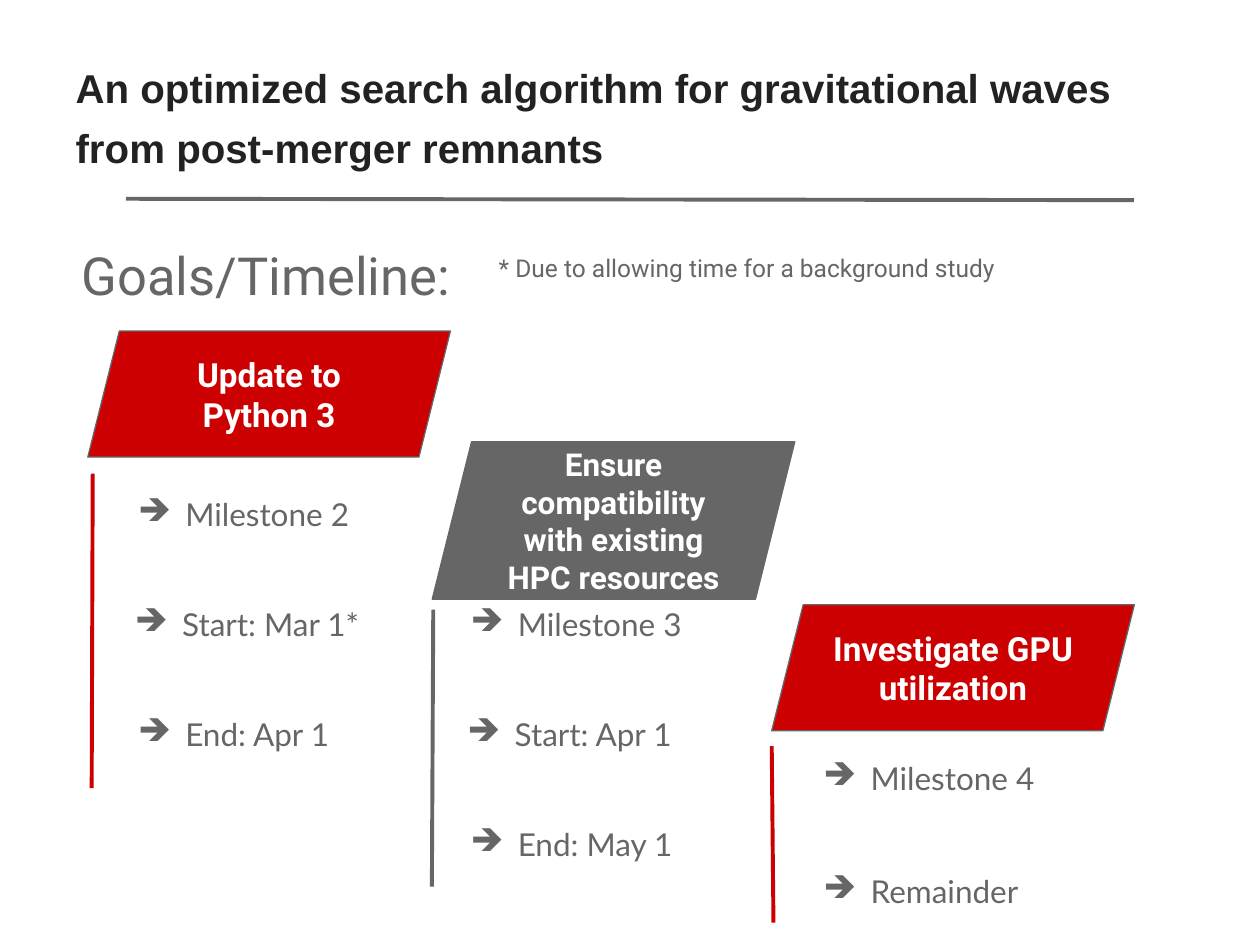
from lxml.etree import SubElement
from pptx import Presentation
from pptx.dml.color import RGBColor
from pptx.enum.shapes import MSO_CONNECTOR, MSO_SHAPE
from pptx.enum.text import MSO_ANCHOR, PP_ALIGN
from pptx.oxml.ns import qn
from pptx.util import Pt

RED = RGBColor(0xCC, 0x00, 0x00)
GRAY = RGBColor(0x66, 0x66, 0x66)
INK = RGBColor(0x22, 0x22, 0x22)
WHITE = RGBColor(0xFF, 0xFF, 0xFF)
INSET = 7.2


def write(shape, lines, size, face, color, bold=False, align=PP_ALIGN.LEFT, bullet=None, gap=0):
    frame = shape.text_frame
    frame.word_wrap = True
    for side in ("left", "top", "right", "bottom"):
        setattr(frame, f"margin_{side}", Pt(INSET))
    for index, line in enumerate(lines):
        paragraph = frame.paragraphs[0] if index == 0 else frame.add_paragraph()
        paragraph.alignment = align
        if index:
            paragraph.space_before = Pt(gap)
        if bullet:
            properties = paragraph._p.get_or_add_pPr()
            properties.set("marL", str(Pt(36)))
            properties.set("indent", str(Pt(-27)))
            bullet_color = SubElement(properties, qn("a:buClr"))
            SubElement(bullet_color, qn("a:srgbClr")).set("val", str(color))
            SubElement(properties, qn("a:buChar")).set("char", bullet)
        run = paragraph.add_run()
        run.text = line
        for name, value in {"size": Pt(size), "name": face, "bold": bold}.items():
            setattr(run.font, name, value)
        run.font.color.rgb = color
    return frame


def rule(x1, y1, x2, y2, color):
    line = slide.shapes.add_connector(MSO_CONNECTOR.STRAIGHT, Pt(x1), Pt(y1), Pt(x2), Pt(y2))
    line.line.color.rgb = color
    line.line.width = Pt(2.25)
    SubElement(line._element.spPr, qn("a:effectLst"))


deck = Presentation()
deck.slide_width, deck.slide_height = Pt(720), Pt(540)
slide = deck.slides.add_slide(deck.slide_layouts[5])

title = slide.shapes.title
placement = {"left": 36, "top": 36.7, "width": 648, "height": 90}
for side, value in placement.items():
    setattr(title, side, Pt(value))
heading = write(
    title,
    ["An optimized search algorithm for gravitational waves from post-merger remnants"],
    23, "Arial", INK, bold=True,
)
heading.vertical_anchor = MSO_ANCHOR.BOTTOM
heading.margin_bottom = Pt(28.7)
heading.paragraphs[0].line_spacing = 1.25
rule(648, 114.4, 72, 113.6, GRAY)

for text, left, top, width, height, size in [
    ("Goals/Timeline:", 39.6, 131.8, 229.7, 52.6, 30),
    ("* Due to allowing time for a background study", 277.9, 137.5, 406, 44.6, 14),
]:
    caption = slide.shapes.add_textbox(Pt(left), Pt(top), Pt(width), Pt(height))
    write(caption, [text], size, "Roboto", GRAY)

ROW_PITCH = 62.8
goals = [
    ("Update to Python 3", RED, 50.2, 189.2, 72, 19, (53, 270.6, 52.4, 450.4),
     [(62.8, 275.8, ["Milestone 2"]), (61, 275.8 + ROW_PITCH, ["Start: Mar 1*"]),
      (62.8, 275.8 + 2 * ROW_PITCH, ["End: Apr 1"])]),
    ("Ensure compatibility with existing HPC resources", GRAY, 247, 252.4, 90, 18,
     (247.6, 348.4, 246.8, 506.6),
     [(252.8, 338.6, ["Milestone 3"]), (251, 338.6 + ROW_PITCH, ["Start: Apr 1"]),
      (252.8, 338.6 + 2 * ROW_PITCH, ["End: May 1"])]),
    ("Investigate GPU utilization", RED, 441, 345.6, 72, 19, (441, 426.4, 442, 527.2),
     [(454.4, 426.4, ["Milestone 4", "Remainder"])]),
]
for goal, color, left, top, height, size, bar, steps in goals:
    banner = slide.shapes.add_shape(
        MSO_SHAPE.PARALLELOGRAM, Pt(left), Pt(top), Pt(207.2), Pt(height))
    banner.adjustments[0] = 0.25
    banner.shadow.inherit = False
    banner.fill.solid()
    banner.fill.fore_color.rgb = color
    banner.line.color.rgb = GRAY
    banner.line.width = Pt(0.75)
    label = write(banner, [goal], size, "Roboto", WHITE, bold=True, align=PP_ALIGN.CENTER)
    label.vertical_anchor = MSO_ANCHOR.MIDDLE
    rule(*bar, color)
    for step_left, step_top, lines in steps:
        step = slide.shapes.add_textbox(Pt(step_left), Pt(step_top), Pt(170), Pt(52.6))
        write(step, lines, 18, "Lato", GRAY, bullet="➔", gap=43)

deck.save("out.pptx")
